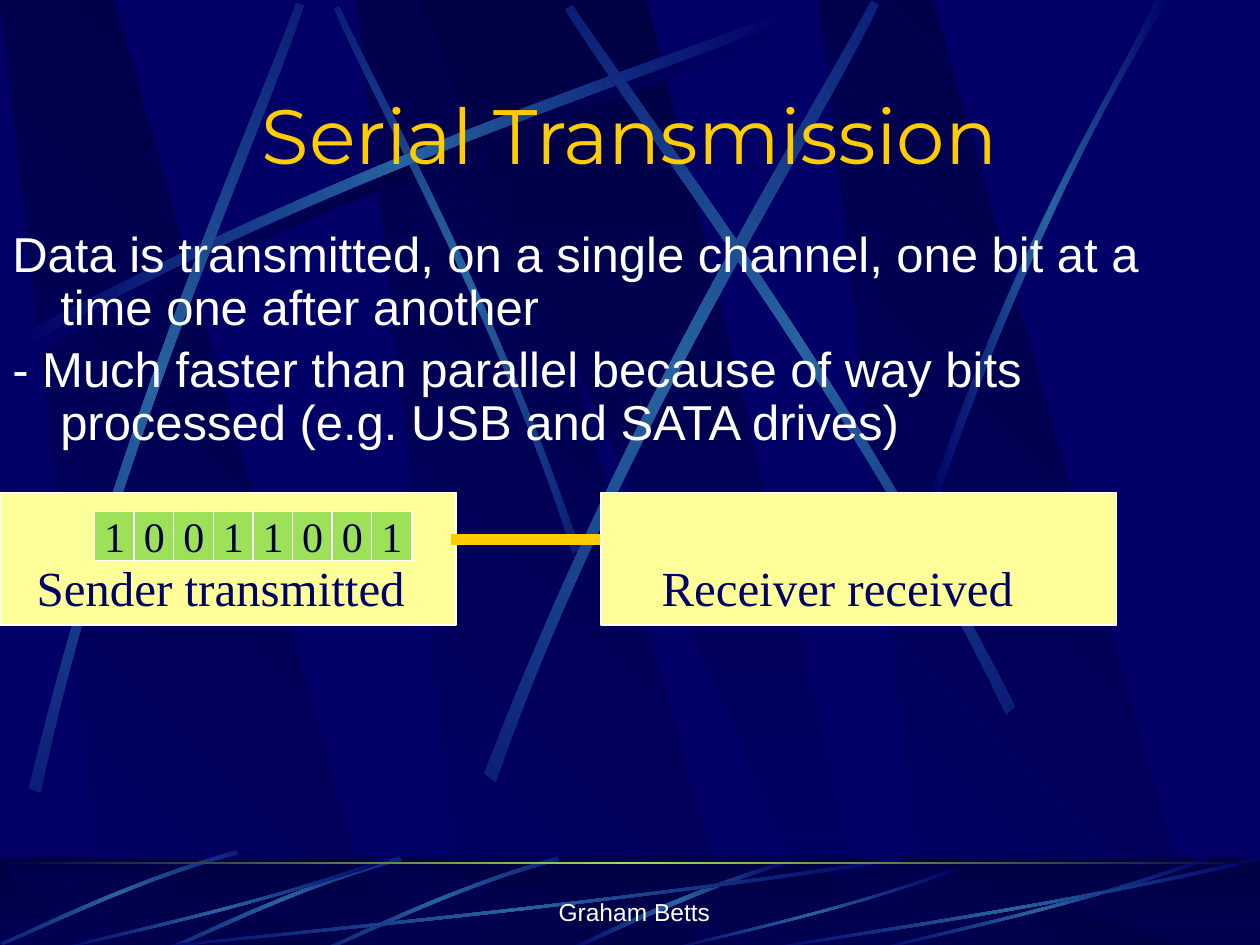
import dataclasses
import math
import lxml.etree
import pptx
import pptx.dml.color
import pptx.enum.shapes
import pptx.enum.text
import pptx.oxml.ns
import pptx.shapes.autoshape
import pptx.slide
import pptx.text.text
import pptx.util

Inches = pptx.util.Inches
Pt = pptx.util.Pt
Anchor = pptx.enum.text.MSO_ANCHOR
Align = pptx.enum.text.PP_ALIGN
qn = pptx.oxml.ns.qn
Point = tuple[float, float]


@dataclasses.dataclass(frozen=True)
class Theme:
    navy: str = "000066"
    night: str = "000044"
    beam: str = "2663A0"
    green: str = "9CE157"
    cream: str = "FFFF99"
    gold: str = "FFCC00"
    white: str = "FFFFFF"
    sans: str = "Arial"
    serif: str = "Times New Roman"
    display: str = "Montserrat"
    title_size: float = 44
    body_size: float = 28
    bit_size: float = 24
    footer_size: float = 14


THEME = Theme()


@dataclasses.dataclass(frozen=True)
class Area:
    left: float
    top: float
    width: float
    height: float

    def emu(self) -> list[int]:
        return [Inches(value) for value in dataclasses.astuple(self)]

    def place(self, points: list[Point]) -> list[Point]:
        return [(self.left + x * self.width, self.top + y * self.height) for x, y in points]


@dataclasses.dataclass(frozen=True)
class Gradient:
    colors: tuple[str, ...]
    angle: float = 0


@dataclasses.dataclass(frozen=True)
class Beam:
    controls: list[Point]
    angle: float = 0
    center: Point = (0, 0)
    middle: str = THEME.beam

    def moved(self, x: float, y: float, middle: str = THEME.beam) -> "Beam":
        return Beam(Area(x, y, 1, 1).place(self.controls), self.angle,
                    (self.center[0] + x, self.center[1] + y), middle)

    def level(self) -> list[Point]:
        cosine, sine = math.cos(math.radians(self.angle)), math.sin(math.radians(self.angle))
        offsets = [(x - self.center[0], y - self.center[1]) for x, y in self.controls]
        return [(self.center[0] + x * cosine + y * sine, self.center[1] + y * cosine - x * sine)
                for x, y in offsets]


@dataclasses.dataclass(frozen=True)
class Style:
    font: str
    size: float
    color: str
    align: Align = Align.LEFT


@dataclasses.dataclass(frozen=True)
class Device:
    area: Area
    label: str
    indent: float


SLAB = [(0.285, 1), (1, 1), (0.3, 0), (0, 0)]
WEDGE = [(0, 0), (0.9, 1), (1, 1), (0.5, 0)]
SWEEP = [(1, 0.04), (0.57, 0.57), (0.17, 0.85), (0.005, 1),
         (0, 0.99), (0.165, 0.81), (0.62, 0.51), (0.995, 0)]
LONG_BEAM = Beam([(0.14, 2.67), (2.78, 1.25), (5.18, 0.51), (6.2, 0.1),
                  (6.23, 0.16), (5.22, 0.61), (2.48, 1.43), (0.17, 2.77)])
BEAMS = [
    LONG_BEAM.moved(0.06, 0.08, THEME.night),
    Beam([(4.6, 4.36), (3.91, 2.34), (3.02, 0.77), (2.69, 0.05),
          (2.65, 0.07), (2.95, 0.79), (3.98, 2.58), (4.54, 4.39)], 45, (3.62, 2.22)),
    LONG_BEAM,
    Beam([(0.23, 6.25), (0.93, 3.34), (1.97, 1.05), (2.35, 0.02),
          (2.41, 0.04), (2.07, 1.09), (0.86, 3.68), (0.32, 6.29)], 311.7, (1.33, 3.16)),
    Beam([(3.85, 6.14), (4.98, 3.2), (6.38, 1.02), (6.92, 0.01),
          (6.98, 0.04), (6.49, 1.08), (4.86, 3.55), (3.94, 6.21)], 321.6, (5.43, 3.1)),
    Beam([(8.06, 5.6), (6.7, 2.93), (5.16, 0.95), (4.55, 0.04),
          (4.49, 0.07), (5.07, 1.01), (6.85, 3.25), (7.99, 5.67)], 34.7, (6.27, 2.86)),
    Beam([(7.38, 3.94), (8.14, 1.73), (8.88, 0.66), (9.17, 0),
          (9.27, 0), (8.36, 1.45), (7.69, 3.22), (7.44, 3.97)]),
]
SLANTED_BEAM = Beam([(4.42, 6.8), (3.55, 7.05), (2.87, 7.4), (2.56, 7.53),
                     (2.57, 7.55), (2.88, 7.43), (3.65, 7.03), (4.44, 6.83)], 315, (3.5, 7.18))
SWEEP_AREAS = [Area(1, 6.8, 6.17, 0.75), Area(0.42, 6.8, 2.67, 0.75), Area(5.27, 6.89, 2.31, 0.66),
               Area(6.92, 6.8, 2.67, 0.75), Area(6, 6.8, 4, 0.75)]
FOOTER_BEAMS = [
    Beam([(6.27, 6.82), (5.37, 7.09), (4.77, 7.42), (4.48, 7.54),
          (4.53, 7.55), (4.9, 7.38), (5.71, 7), (6.28, 6.85)]),
    SLANTED_BEAM,
    SLANTED_BEAM.moved(-1.25, 0),
    SLANTED_BEAM.moved(-2.55, -0.05),
    *(Beam(area.place(SWEEP)) for area in SWEEP_AREAS),
]
SENDER = Device(Area(0, 3.91, 3.62, 1.05), "Sender transmitted", 0.19)
RECEIVER = Device(Area(4.77, 3.91, 4.09, 1.05), "Receiver received", 0.38)


def rgb(color: str) -> pptx.dml.color.RGBColor:
    return pptx.dml.color.RGBColor.from_string(color)


def paint(shape: pptx.shapes.autoshape.Shape, fill: str | Gradient, outline: str | None = None) -> None:
    shape.shadow.inherit = False
    if isinstance(fill, Gradient):
        shape.fill.gradient()
        shape.fill.gradient_angle = (360 - fill.angle) % 360
        stops = shape._element.spPr.find(".//" + qn("a:gsLst"))
        stops.clear()
        for index, color in enumerate(fill.colors):
            position = round(100000 * index / (len(fill.colors) - 1))
            stop = lxml.etree.SubElement(stops, qn("a:gs"), pos=str(position))
            lxml.etree.SubElement(stop, qn("a:srgbClr"), val=color)
    else:
        shape.fill.solid()
        shape.fill.fore_color.rgb = rgb(fill)
    if outline:
        shape.line.color.rgb = rgb(outline)
        shape.line.width = Pt(0.75)
    else:
        shape.line.fill.background()


def draw_rectangle(slide: pptx.slide.Slide, area: Area, fill: str | Gradient,
                   outline: str | None = None) -> pptx.shapes.autoshape.Shape:
    shape = slide.shapes.add_shape(pptx.enum.shapes.MSO_SHAPE.RECTANGLE, *area.emu())
    paint(shape, fill, outline)
    return shape


def draw_outline(slide: pptx.slide.Slide, points: list[Point],
                 fill: Gradient) -> pptx.shapes.autoshape.Shape:
    corners = [(Inches(x), Inches(y)) for x, y in points]
    builder = slide.shapes.build_freeform(*corners[0])
    builder.add_line_segments(corners[1:])
    shape = builder.convert_to_shape()
    paint(shape, fill)
    return shape


def draw_beam(slide: pptx.slide.Slide, beam: Beam) -> None:
    shape = draw_outline(slide, beam.level(), Gradient((THEME.navy, beam.middle, THEME.navy)))
    segments = shape._element.spPr.findall(".//" + qn("a:lnTo"))
    for group in (segments[:3], segments[4:7]):
        bend = lxml.etree.Element(qn("a:cubicBezTo"))
        group[0].addprevious(bend)
        for segment in group:
            bend.append(segment[0])
            segment.getparent().remove(segment)
    shape.rotation = beam.angle


def draw_slabs(slide: pptx.slide.Slide, top: float, height: float) -> None:
    for left in (2.83, 0, 6.5):
        draw_outline(slide, Area(left, top, 3.02, height).place(SLAB),
                     Gradient((THEME.navy, THEME.night), 315))
    draw_outline(slide, Area(3.33, top, 3.61, height).place(WEDGE),
                 Gradient((THEME.night, THEME.navy), 90))


def draw_background(slide: pptx.slide.Slide) -> None:
    slide.background.fill.solid()
    slide.background.fill.fore_color.rgb = rgb(THEME.navy)
    draw_slabs(slide, 0, 7.52)
    for beam in BEAMS:
        draw_beam(slide, beam)

    band = Area(0, 6.8, 10, 0.75)
    draw_rectangle(slide, band, Gradient((THEME.night, THEME.navy), 90))
    draw_slabs(slide, 6.88, 0.66)
    veil = draw_rectangle(slide, band, THEME.night)
    tint = veil._element.spPr.find(".//" + qn("a:srgbClr"))
    lxml.etree.SubElement(tint, qn("a:alpha"), val="50000")
    for beam in FOOTER_BEAMS:
        draw_beam(slide, beam)
    draw_rectangle(slide, Area(0, 6.84, 10, 0.02), Gradient((THEME.night, THEME.green, THEME.night)))


def write(frame: pptx.text.text.TextFrame, lines: list[str], style: Style, anchor: Anchor,
          wrap: bool = True) -> None:
    frame.word_wrap = wrap
    frame.vertical_anchor = anchor
    for index, line in enumerate(lines):
        para = frame.paragraphs[0] if index == 0 else frame.add_paragraph()
        para.text = line
        para.alignment = style.align
        para.font.name = style.font
        para.font.size = Pt(style.size)
        para.font.color.rgb = rgb(style.color)


def draw_text(slide: pptx.slide.Slide, area: Area, lines: list[str], style: Style,
              anchor: Anchor) -> pptx.text.text.TextFrame:
    frame = slide.shapes.add_textbox(*area.emu()).text_frame
    write(frame, lines, style, anchor)
    return frame


def draw_body(slide: pptx.slide.Slide) -> None:
    lines = ["Data is transmitted, on a single channel, one bit at a time one after another",
             "- Much faster than parallel because of way bits processed (e.g. USB and SATA drives)"]
    frame = draw_text(slide, Area(0, 1.78, 9.25, 2.28), lines,
                      Style(THEME.sans, THEME.body_size, THEME.white), Anchor.TOP)
    for para in frame.paragraphs:
        para.line_spacing = 0.9
        properties = para._p.get_or_add_pPr()
        properties.set("marL", str(Inches(0.38)))
        properties.set("indent", str(Inches(-0.38)))
    frame.paragraphs[1].space_before = Pt(5)


def draw_device(slide: pptx.slide.Slide, device: Device) -> None:
    frame = draw_rectangle(slide, device.area, THEME.cream, THEME.white).text_frame
    write(frame, [device.label], Style(THEME.serif, THEME.body_size, THEME.navy), Anchor.BOTTOM)
    frame.margin_left = Inches(0.1 + device.indent)
    frame.margin_bottom = Inches(0.07)


def draw_channel(slide: pptx.slide.Slide) -> None:
    channel = slide.shapes.add_connector(pptx.enum.shapes.MSO_CONNECTOR.STRAIGHT,
                                         Inches(3.58), Inches(4.28), Inches(8.75), Inches(4.28))
    channel.line.color.rgb = rgb(THEME.gold)
    channel.line.width = Pt(6)
    lxml.etree.SubElement(channel._element.spPr, qn("a:effectLst"))


def draw_bits(slide: pptx.slide.Slide, bits: str) -> None:
    style = Style(THEME.serif, THEME.bit_size, THEME.night, Align.CENTER)
    for index, bit in enumerate(bits):
        area = Area(0.75 + 2.2 * index / (len(bits) - 1), 4.06, 0.32, 0.39)
        cell = draw_rectangle(slide, area, THEME.green, THEME.white)
        write(cell.text_frame, [bit], style, Anchor.MIDDLE, wrap=False)


def main() -> None:
    deck = pptx.Presentation()
    deck.slide_width, deck.slide_height = Inches(10), Inches(7.5)
    slide = deck.slides.add_slide(deck.slide_layouts[6])
    draw_background(slide)
    draw_text(slide, Area(3.45, 6.9, 3.17, 0.5), ["Graham Betts"],
              Style(THEME.sans, THEME.footer_size, THEME.white, Align.CENTER), Anchor.BOTTOM)
    draw_device(slide, SENDER)
    draw_body(slide)
    draw_channel(slide)
    draw_device(slide, RECEIVER)
    draw_text(slide, Area(0.75, 0.65, 8.5, 0.83), ["Serial Transmission"],
              Style(THEME.display, THEME.title_size, THEME.gold, Align.CENTER), Anchor.MIDDLE)
    draw_bits(slide, "10011001")
    deck.save("out.pptx")


if __name__ == "__main__":
    main()
